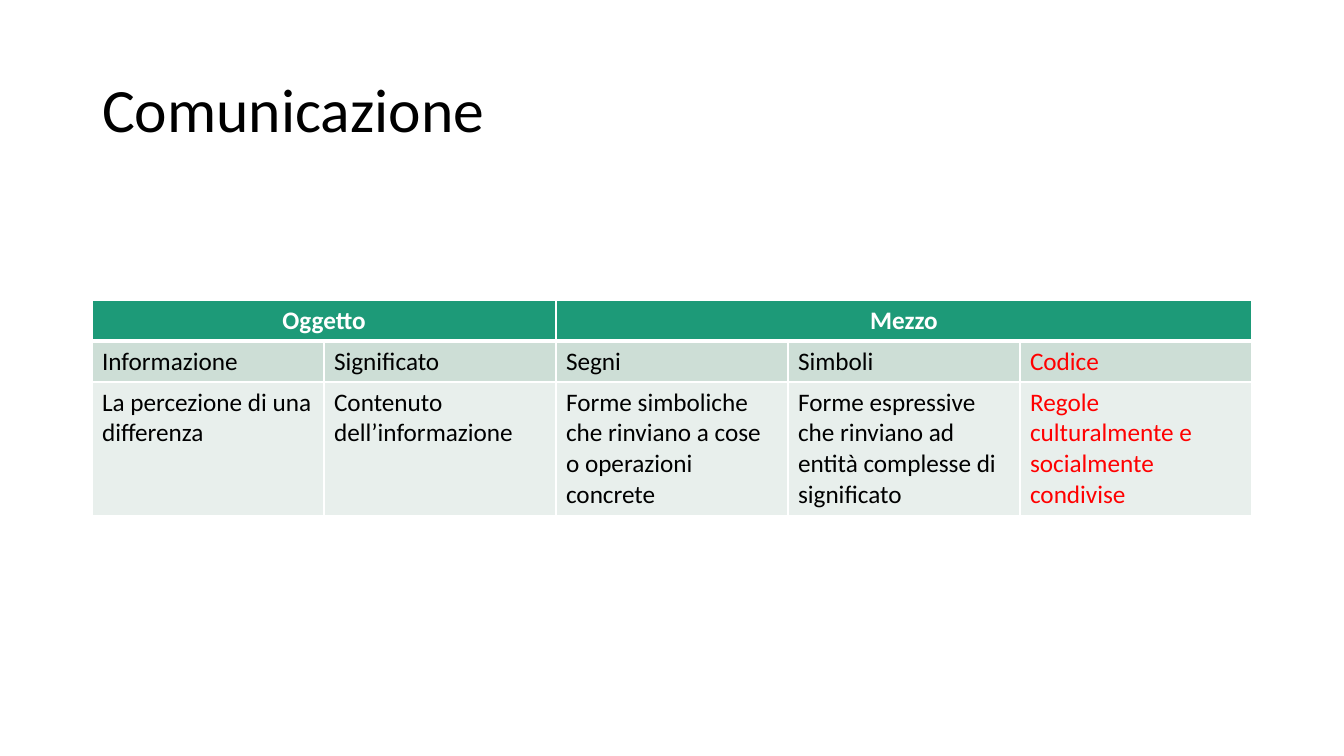
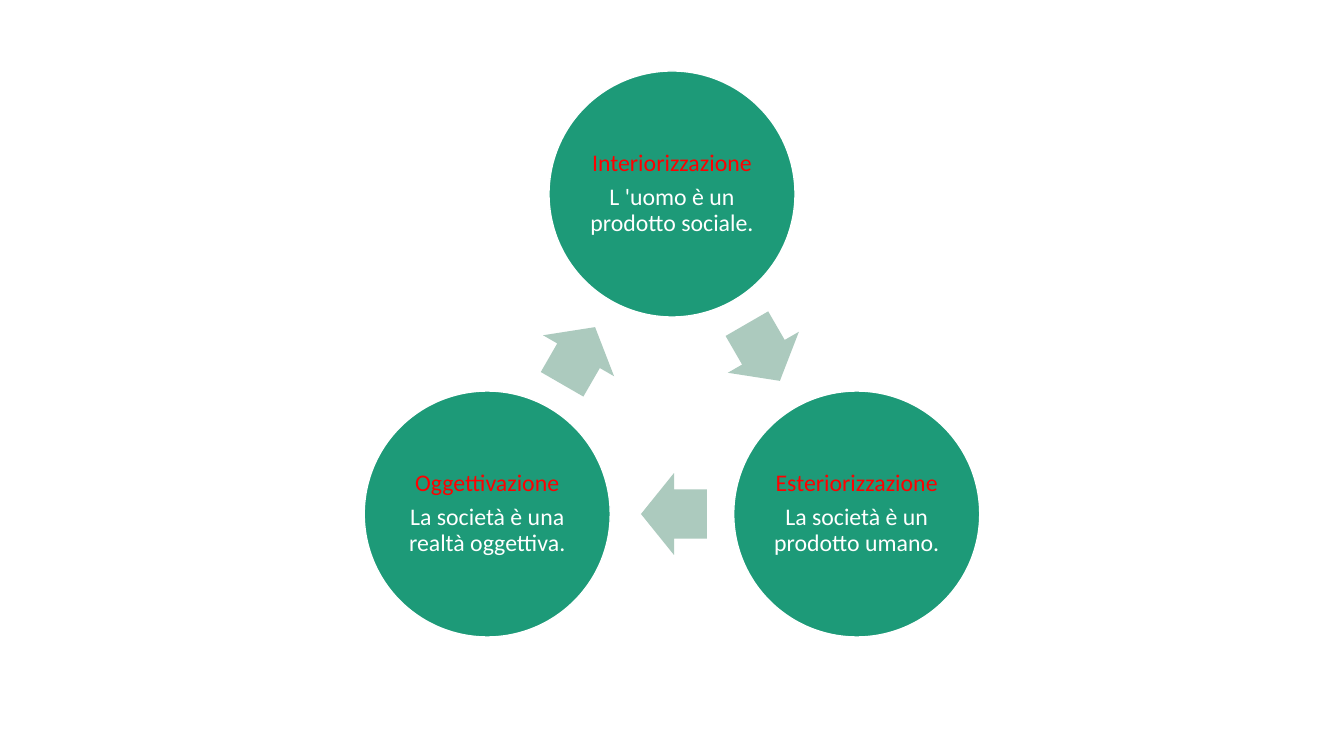
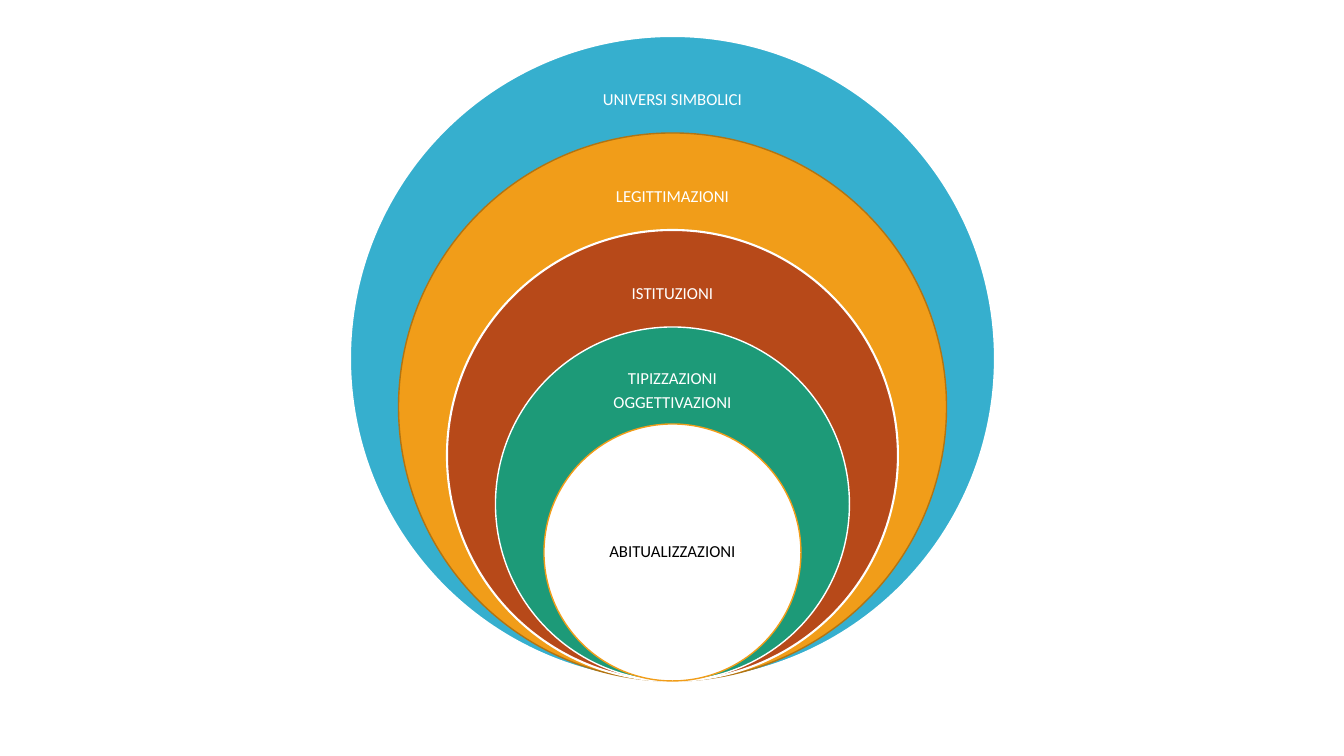
import collections
import math

import pptx
import pptx.dml.color
import pptx.enum.shapes
import pptx.enum.text
import pptx.oxml
import pptx.oxml.ns
import pptx.util

RGBColor = pptx.dml.color.RGBColor
PP_ALIGN = pptx.enum.text.PP_ALIGN
MSO_ANCHOR = pptx.enum.text.MSO_ANCHOR
MSO_SHAPE = pptx.enum.shapes.MSO_SHAPE

EMU_PER_PX = 914400 / 100.8
FONT = "Calibri"
TITLE_ONLY, BLANK = 5, 6

WHITE = RGBColor(0xFF, 0xFF, 0xFF)
BLACK = RGBColor(0x00, 0x00, 0x00)
RED = RGBColor(0xFF, 0x00, 0x00)
GREEN = RGBColor(0x1D, 0x9A, 0x78)
SAGE = RGBColor(0xAC, 0xCA, 0xBE)
LIGHT_SAGE = RGBColor(0xCD, 0xDE, 0xD6)
PALE_SAGE = RGBColor(0xE8, 0xEF, 0xEC)
BLUE = RGBColor(0x36, 0xAF, 0xCE)
ORANGE = RGBColor(0xF1, 0x9D, 0x19)
DARK_ORANGE = RGBColor(0xB2, 0x74, 0x12)
RUST = RGBColor(0xB7, 0x49, 0x19)

Box = collections.namedtuple("Box", "left top width height")
Ring = collections.namedtuple("Ring", "lines label_width fill outline outline_pt color")

HEADINGS = [("Oggetto", 0, 1), ("Mezzo", 2, 4)]
TERMS = ["Informazione", "Significato", "Segni", "Simboli", "Codice"]
MEANINGS = [
    "La percezione di una differenza",
    "Contenuto dell’informazione",
    "Forme simboliche che rinviano a cose o operazioni concrete",
    "Forme espressive che rinviano ad entità complesse di significato",
    "Regole culturalmente e socialmente condivise",
]
PHASES = [
    ("Interiorizzazione", "L 'uomo è un prodotto sociale."),
    ("Esteriorizzazione", "La società è un prodotto umano."),
    ("Oggettivazione", "La società è una realtà oggettiva."),
]
RINGS = [
    Ring(["UNIVERSI SIMBOLICI"], 242, BLUE, WHITE, 1.5, WHITE),
    Ring(["LEGITTIMAZIONI"], 236, ORANGE, DARK_ORANGE, 1, WHITE),
    Ring(["ISTITUZIONI"], 234, RUST, WHITE, 1.5, WHITE),
    Ring(["TIPIZZAZIONI", "OGGETTIVAZIONI"], 192, GREEN, WHITE, 1, WHITE),
    Ring(["ABITUALIZZAZIONI"], 182, WHITE, ORANGE, 1, BLACK),
]


def px(length):
    return pptx.util.Emu(round(length * EMU_PER_PX))


def emu(box):
    return [px(length) for length in box]


def centred_box(x, y, width, height):
    return Box(x - width / 2, y - height / 2, width, height)


def style_paragraph(paragraph, size, color, align=PP_ALIGN.LEFT, bold=False):
    paragraph.alignment = align
    font = paragraph.font
    font.name, font.size, font.bold = FONT, pptx.util.Pt(size), bold
    font.color.rgb = color


def add_diagram_text(shape, lines, colors, size, inset):
    """Centre the lines in the shape, one paragraph and colour each."""
    frame = shape.text_frame
    frame.word_wrap = True
    frame.vertical_anchor = MSO_ANCHOR.MIDDLE
    frame.margin_left = frame.margin_right = px(inset)
    frame.margin_top = frame.margin_bottom = px(inset)
    frame.text = "\n".join(lines)
    for paragraph, color in zip(frame.paragraphs, colors):
        style_paragraph(paragraph, size, color, PP_ALIGN.CENTER)
        paragraph.line_spacing = 0.9
        paragraph.space_after = pptx.util.Pt(round(size * 0.35, 1))


def add_filled_shape(slide, preset, box, fill, outline=None, outline_pt=1):
    shape = slide.shapes.add_shape(preset, *emu(box))
    shape.shadow.inherit = False
    shape.fill.solid()
    shape.fill.fore_color.rgb = fill
    if outline is None:
        shape.line.fill.background()
    else:
        shape.line.color.rgb = outline
        shape.line.width = pptx.util.Pt(outline_pt)
    return shape


def place_title(slide, text, box):
    title = slide.shapes.title
    title.left, title.top, title.width, title.height = emu(box)
    frame = title.text_frame
    frame.text = text
    frame.vertical_anchor = MSO_ANCHOR.MIDDLE
    frame.auto_size = pptx.enum.text.MSO_AUTO_SIZE.NONE
    style_paragraph(frame.paragraphs[0], 44, BLACK)
    frame.paragraphs[0].line_spacing = 0.9


def set_cell_borders(cell, bottom_pt):
    properties = cell._tc.get_or_add_tcPr()
    widths = [("lnL", 1), ("lnR", 1), ("lnT", 1), ("lnB", bottom_pt)]
    for position, (side, width) in enumerate(widths):
        properties.insert(position, pptx.oxml.parse_xml(
            f'<a:{side} {pptx.oxml.ns.nsdecls("a")} w="{pptx.util.Pt(width)}">'
            f'<a:solidFill><a:srgbClr val="{WHITE}"/></a:solidFill></a:{side}>'
        ))


def add_communication_table(slide, box):
    table = slide.shapes.add_table(3, len(TERMS), *emu(box)).table
    for column in table.columns:
        column.width = px(box.width / len(TERMS))
    row_heights = [41, 41, box.height - 82]
    fills = [GREEN, LIGHT_SAGE, PALE_SAGE]
    for row, (height, fill) in enumerate(zip(row_heights, fills)):
        table.rows[row].height = px(height)
        for cell in table.rows[row].cells:
            cell.fill.solid()
            cell.fill.fore_color.rgb = fill
            set_cell_borders(cell, 3 if row == 0 else 1)

    for heading, first, last in HEADINGS:
        cell = table.cell(0, first)
        cell.merge(table.cell(0, last))
        cell.text = heading
        cell.vertical_anchor = MSO_ANCHOR.MIDDLE
        style_paragraph(cell.text_frame.paragraphs[0], 18, WHITE, PP_ALIGN.CENTER, True)

    for row, texts in enumerate([TERMS, MEANINGS], start=1):
        for column, text in enumerate(texts):
            cell = table.cell(row, column)
            cell.text = text
            color = RED if TERMS[column] == "Codice" else BLACK
            style_paragraph(cell.text_frame.paragraphs[0], 18, color)


def add_phase_cycle(slide, box):
    """Set the phases clockwise on a circle, with an arrow from each to the next."""
    diameter, arrow_width, arrow_height, arrow_setback = 246, 66, 82, 2
    radius = (box.height - diameter) / 1.5
    center_x = box.left + box.width / 2
    center_y = box.top + diameter / 2 + radius
    step = 360 / len(PHASES)

    def offset(angle, distance):
        turn = math.radians(angle)
        return distance * math.cos(turn), distance * math.sin(turn)

    for index, phase in enumerate(PHASES):
        angle = index * step - 90
        dx, dy = offset(angle, radius)
        phase_box = centred_box(center_x + dx, center_y + dy, diameter, diameter)
        circle = add_filled_shape(slide, MSO_SHAPE.OVAL, phase_box, GREEN, WHITE)
        add_diagram_text(circle, phase, [RED, WHITE], 17, 2)

        heading = angle + step / 2 + 90
        dx, dy = offset(angle + step / 2, radius / 2)
        back_x, back_y = offset(heading, arrow_setback)
        arrow_box = centred_box(center_x + dx - back_x, center_y + dy - back_y,
                                arrow_width, arrow_height)
        arrow = add_filled_shape(slide, MSO_SHAPE.RIGHT_ARROW, arrow_box, SAGE)
        arrow.adjustments[0], arrow.adjustments[1] = 0.6, 0.5
        arrow.rotation = heading


def add_nested_rings(slide, box):
    """Stack circles that touch at the bottom of the box, largest at the back."""
    shrink, label_drop, label_height = 97, 32, 64
    center_x = box.left + box.width / 2
    for index, ring in enumerate(RINGS):
        diameter = box.width - index * shrink
        top = box.top + box.height - diameter
        ring_box = Box(center_x - diameter / 2, top, diameter, diameter)
        add_filled_shape(slide, MSO_SHAPE.OVAL, ring_box,
                         ring.fill, ring.outline, ring.outline_pt)

        innermost = index == len(RINGS) - 1
        label_y = top + (diameter / 2 if innermost else label_drop + label_height / 2)
        label_box = centred_box(center_x, label_y, ring.label_width, label_height)
        label = slide.shapes.add_textbox(*emu(label_box))
        add_diagram_text(label, ring.lines, [ring.color] * len(ring.lines), 12, 9)


def main():
    deck = pptx.Presentation()
    deck.slide_width, deck.slide_height = px(1344), px(756)

    def new_slide(layout):
        return deck.slides.add_slide(deck.slide_layouts[layout])

    communication = new_slide(TITLE_ONLY)
    place_title(communication, "Comunicazione", Box(92, 40, 1160, 146))
    add_communication_table(communication, Box(92, 300, 1160, 213))
    add_phase_cycle(new_slide(BLANK), Box(364, 71, 616, 566))
    add_nested_rings(new_slide(BLANK), Box(350, 36, 645, 645))
    deck.save("out.pptx")


if __name__ == "__main__":
    main()
